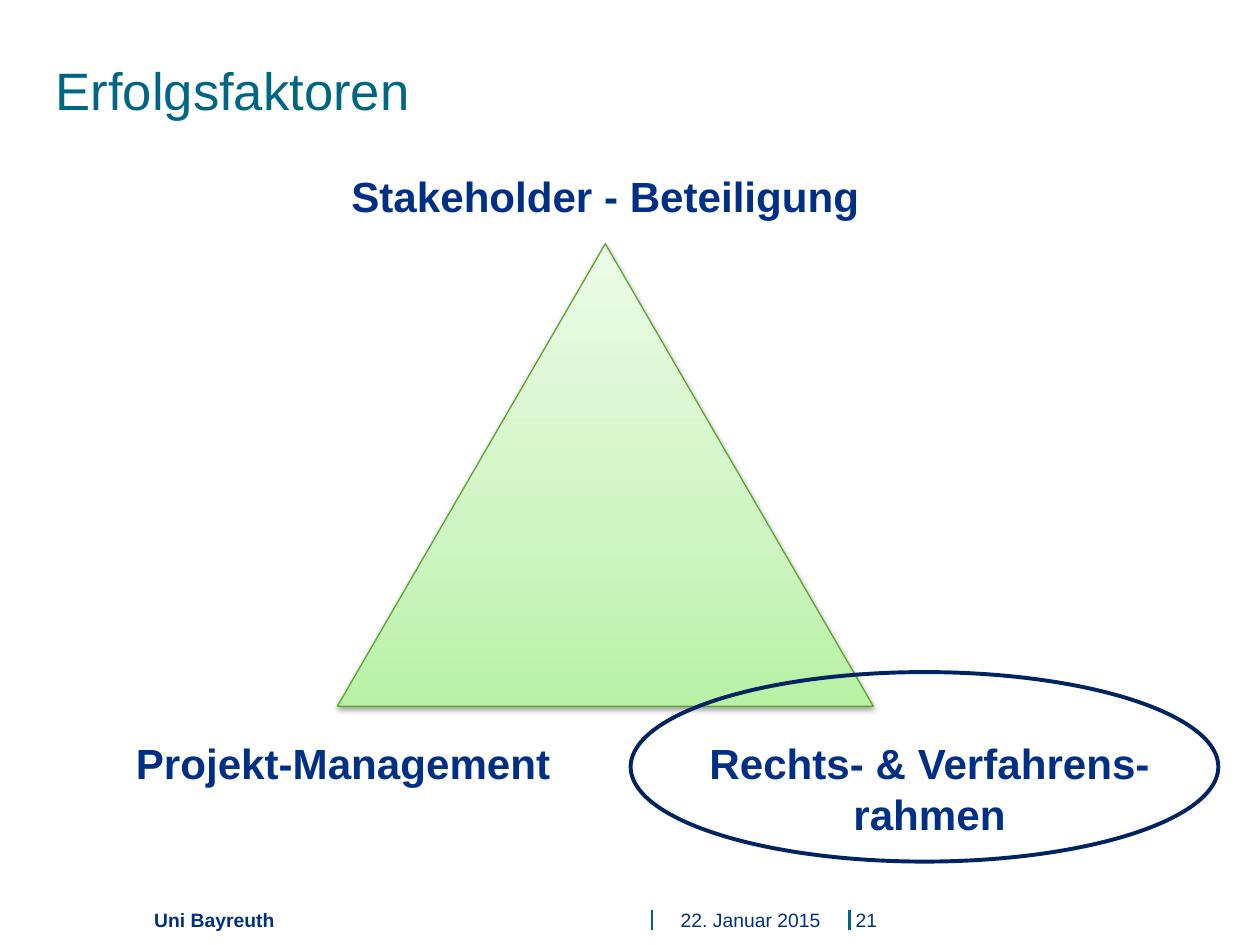
from copy import deepcopy

from lxml import etree
from pptx import Presentation
from pptx.dml.color import RGBColor
from pptx.enum.shapes import MSO_CONNECTOR, MSO_SHAPE
from pptx.enum.text import MSO_ANCHOR, PP_ALIGN
from pptx.oxml.ns import qn
from pptx.util import Inches, Pt

LEFT, CENTER = PP_ALIGN.LEFT, PP_ALIGN.CENTER
TOP, BOTTOM = MSO_ANCHOR.TOP, MSO_ANCHOR.BOTTOM
TRIANGLE, OVAL = MSO_SHAPE.ISOSCELES_TRIANGLE, MSO_SHAPE.OVAL
STRAIGHT = MSO_CONNECTOR.STRAIGHT
FONT = "Arial"
COLORS = {
    "title": "006683",
    "text": "003085",
    "highlight": "002462",
    "triangle_line": "5CA430",
    "shadow": "000000",
    "green_dark": "B8F2A5",
    "green_mid": "CDF4C1",
    "green_light": "EBFCE6",
}
GRADIENT = [(0, "green_dark"), (0.35, "green_mid"), (1, "green_light")]


def color(name):
    """Return the named colour."""
    return RGBColor.from_string(COLORS[name])


def write(shape, text, size, color_name, bold=False, align=LEFT, anchor=TOP):
    """Fill a shape with one formatted paragraph."""
    frame = shape.text_frame
    frame.word_wrap = True
    frame.vertical_anchor = anchor
    frame.text = text
    paragraph = frame.paragraphs[0]
    paragraph.alignment = align
    font = paragraph.font
    font.name, font.size, font.bold = FONT, Pt(size), bold
    font.color.rgb = color(color_name)


def add_title(slide, left, top, width, height):
    """Place the slide title."""
    title = slide.shapes.title
    title.left, title.top = Inches(left), Inches(top)
    title.width, title.height = Inches(width), Inches(height)
    write(title, "Erfolgsfaktoren", 30, "title")


def add_triangle(slide, left, top, width, height):
    """Draw the green triangle with gradient and soft shadow."""
    shape = slide.shapes.add_shape(
        TRIANGLE, Inches(left), Inches(top), Inches(width), Inches(height))
    shape.line.color.rgb = color("triangle_line")
    shape.line.width = Pt(0.75)

    shape.fill.gradient()
    properties = shape._element.spPr
    stop_list = properties.find(qn("a:gradFill")).find(qn("a:gsLst"))
    stop_list.append(deepcopy(stop_list[0]))
    for stop, (position, name) in zip(shape.fill.gradient_stops, GRADIENT):
        stop.position = position
        stop.color.rgb = color(name)
    shape.fill.gradient_angle = 90

    shape.shadow.inherit = False
    shadow = etree.SubElement(
        properties.find(qn("a:effectLst")), qn("a:outerShdw"),
        blurRad=str(Pt(3.1)), dist=str(Pt(1.6)), dir="5400000", rotWithShape="0")
    shade = etree.SubElement(shadow, qn("a:srgbClr"), val=COLORS["shadow"])
    etree.SubElement(shade, qn("a:alpha"), val="38000")


def add_highlight(slide, left, top, width, height):
    """Draw the ellipse around the highlighted factor."""
    ellipse = slide.shapes.add_shape(
        OVAL, Inches(left), Inches(top), Inches(width), Inches(height))
    ellipse.shadow.inherit = False
    ellipse.fill.background()
    ellipse.line.color.rgb = color("highlight")
    ellipse.line.width = Pt(2.25)


def add_factors(slide, left, top, width, height):
    """Draw the triangle and label its three corners."""
    add_triangle(slide, left, top, width, height)
    below = height + 0.2
    labels = [
        ("Stakeholder - Beteiligung", 0, -0.63, width, 0.5),
        ("Projekt-Management", -1.71, below, 3.51, 0.81),
        ("Rechts- & Verfahrens-rahmen", 2.8, below, 3.77, 0.91),
    ]
    for text, dx, dy, label_width, label_height in labels:
        box = slide.shapes.add_textbox(
            Inches(left + dx), Inches(top + dy),
            Inches(label_width), Inches(label_height))
        write(box, text, 24, "text", bold=True, align=CENTER)
    add_highlight(slide, left + 2.32, top + 3.39, 4.65, 1.5)


def add_footer(slide, left, top, width, height):
    """Place institution, date and page number with two dividers."""
    entries = [
        ("Uni Bayreuth", 0.11, 4.24, True, LEFT),
        ("22. Januar 2015", 4.12, 1.42, False, CENTER),
        ("21", 5.66, width - 5.66, False, LEFT),
    ]
    for text, dx, entry_width, bold, align in entries:
        box = slide.shapes.add_textbox(
            Inches(left + dx), Inches(top), Inches(entry_width), Inches(height))
        frame = box.text_frame
        frame.margin_left = frame.margin_right = 0
        frame.margin_top = frame.margin_bottom = 0
        write(box, text, 11, "text", bold, align, BOTTOM)
    for dx in (4.05, 5.61):
        x = Inches(left + dx)
        divider = slide.shapes.add_connector(
            STRAIGHT, x, Inches(top + 0.23), x, Inches(top + 0.39))
        divider.line.color.rgb = color("title")
        divider.line.width = Pt(1.5)
        etree.SubElement(divider._element.spPr, qn("a:effectLst"))


def main():
    """Build and save the slide."""
    presentation = Presentation()
    presentation.slide_width = Inches(9.97)
    presentation.slide_height = Inches(7.48)
    slide = presentation.slides.add_slide(presentation.slide_layouts[5])
    add_title(slide, 0.34, 0.41, 9.45, 0.98)
    add_factors(slide, 2.67, 1.93, 4.24, 3.66)
    add_footer(slide, 1.11, 6.97, 6.17, 0.4)
    presentation.save("out.pptx")


if __name__ == "__main__":
    main()
